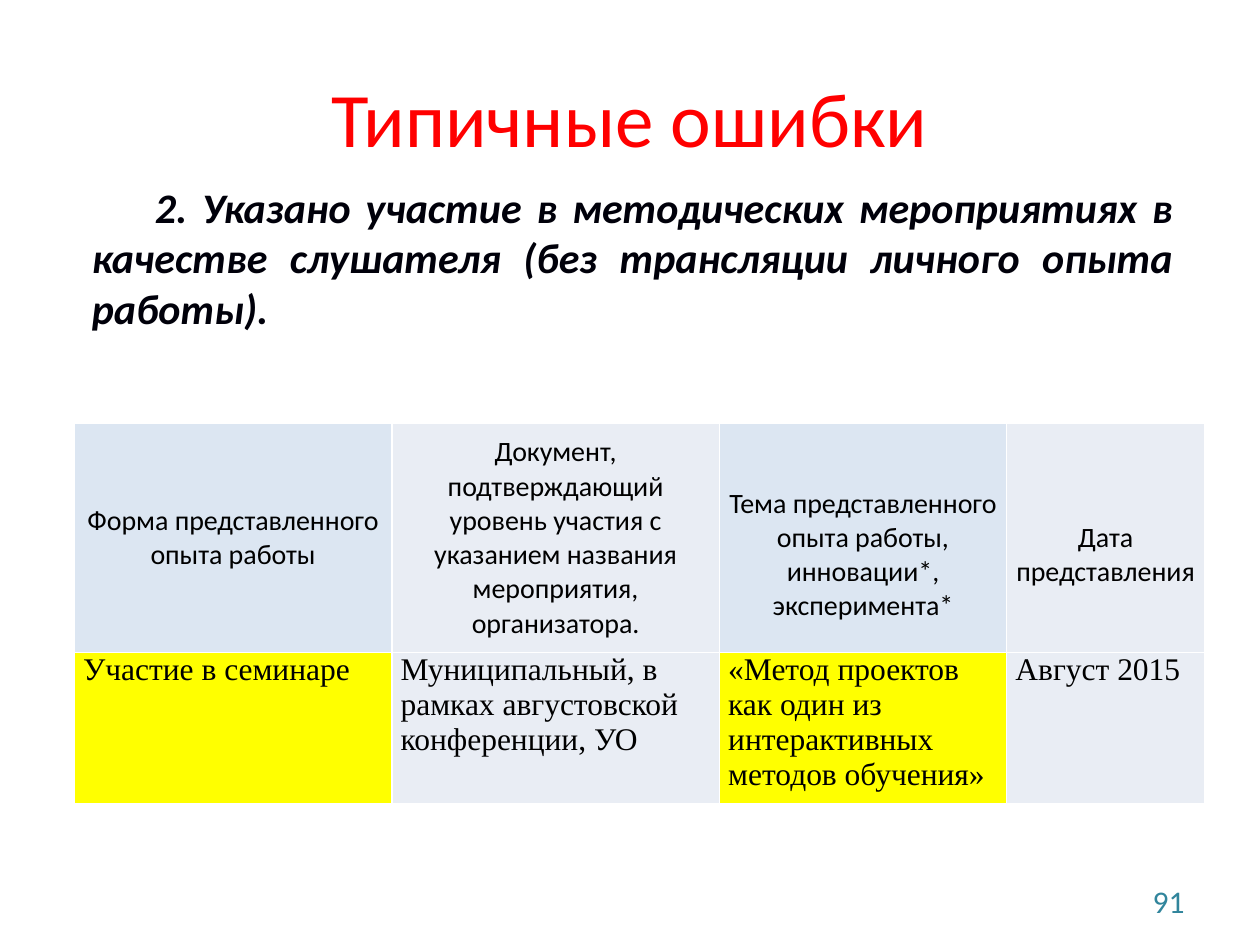
"""Build a slide on typical mistakes, with a table of presented experience."""
from dataclasses import dataclass

from lxml import etree
from pptx import Presentation
from pptx.dml.color import RGBColor
from pptx.enum.text import MSO_ANCHOR, PP_ALIGN
from pptx.oxml.ns import qn
from pptx.util import Inches, Pt

LEFT, MID = PP_ALIGN.LEFT, PP_ALIGN.CENTER
RIGHT, FULL = PP_ALIGN.RIGHT, PP_ALIGN.JUSTIFY
TOP, CENTER = MSO_ANCHOR.TOP, MSO_ANCHOR.MIDDLE
SANS, SERIF = "Calibri", "Times New Roman"
HUES = {
    "red": "FF0000", "ink": "00000A", "black": "000000", "teal": "31859C",
    "blue": "DCE6F2", "grey": "E9EDF4", "yellow": "FFFF00", "white": "FFFFFF",
}


@dataclass
class Column:
    width: float
    head: str
    body: str
    drop: float = 0


COLUMNS = [
    Column(2.52, "Форма представленного опыта работы", "Участие в семинаре"),
    Column(2.6, "Документ, подтверждающий уровень участия с указанием названия "
           "мероприятия, организатора.",
           "Муниципальный, в рамках августовской конференции, УО"),
    Column(2.28, "Тема представленного опыта работы, инновации*, эксперимента*",
           "«Метод проектов как один из интерактивных методов обучения»", 0.27),
    Column(1.57, "Дата представления", "Август 2015", 0.27),
]
ROWS = [1.82, 1.2]


def write(frame, text: str, size: float, hue: str = "black", face: str = SANS,
          align=LEFT, strong: bool = False):
    """Fill a text frame with one formatted paragraph and return it."""
    para = frame.paragraphs[0]
    para.alignment = align
    run = para.add_run()
    run.text = text
    font = run.font
    font.name, font.size = face, Pt(size)
    font.bold = font.italic = strong
    font.color.rgb = RGBColor.from_string(HUES[hue])
    return para


def add_box(slide, left: float, top: float, width: float, height: float, anchor=TOP):
    """Add a wrapping text box and return its frame."""
    box = slide.shapes.add_textbox(*map(Inches, (left, top, width, height)))
    frame = box.text_frame
    frame.word_wrap = True
    frame.vertical_anchor = anchor
    return frame


def edge(cell) -> None:
    """Give a cell thin white borders."""
    props = cell._tc.get_or_add_tcPr()
    for side in ("lnL", "lnR", "lnT", "lnB"):
        line = etree.SubElement(props, qn(f"a:{side}"), w=str(Pt(1)))
        fill = etree.SubElement(line, qn("a:solidFill"))
        etree.SubElement(fill, qn("a:srgbClr"), val=HUES["white"])


def fill_cell(cell, text: str, fill: str, anchor=TOP, drop: float = 0, **form) -> None:
    """Format a table cell and write its text."""
    cell.margin_left = cell.margin_right = Inches(0.07)
    cell.margin_top, cell.margin_bottom = Inches(drop), 0
    cell.vertical_anchor = anchor
    edge(cell)
    cell.fill.solid()
    cell.fill.fore_color.rgb = RGBColor.from_string(HUES[fill])
    write(cell.text_frame, text, **form)


def add_grid(slide, left: float, top: float) -> None:
    """Draw the table from its columns."""
    width = sum(col.width for col in COLUMNS)
    grid = slide.shapes.add_table(
        len(ROWS), len(COLUMNS), *map(Inches, (left, top, width, sum(ROWS)))).table
    for row, height in zip(grid.rows, ROWS):
        row.height = Inches(height)
    for i, col in enumerate(COLUMNS):
        grid.columns[i].width = Inches(col.width)
        shade, mark = ("grey", "grey") if i % 2 else ("blue", "yellow")
        fill_cell(grid.cell(0, i), col.head, shade, CENTER, col.drop,
                  size=16, align=MID)
        fill_cell(grid.cell(1, i), col.body, mark, size=18, face=SERIF)


def main() -> None:
    """Build and save the slide."""
    deck = Presentation()
    deck.slide_width, deck.slide_height = Inches(10), Inches(7.5)
    slide = deck.slides.add_slide(deck.slide_layouts[5])

    title = slide.shapes.title
    title.left, title.top = Inches(0.5), Inches(0.3)
    title.width, title.height = Inches(9), Inches(1.25)
    title.text_frame.vertical_anchor = CENTER
    write(title.text_frame, "Типичные ошибки", 44, "red", align=MID)

    write(add_box(slide, 7.17, 6.95, 2.33, 0.4, CENTER), "91", 18, "teal", align=RIGHT)

    claim = write(
        add_box(slide, 0.43, 1.39, 8.98, 1.31),
        "2. Указано участие в методических мероприятиях в качестве слушателя "
        "(без трансляции личного опыта работы).",
        24, "ink", align=FULL, strong=True)
    props = claim._p.get_or_add_pPr()
    props.set("marL", str(Inches(0.2)))
    props.set("indent", str(Inches(0.5)))

    add_grid(slide, 0.59, 3.36)
    deck.save("out.pptx")


if __name__ == "__main__":
    main()
